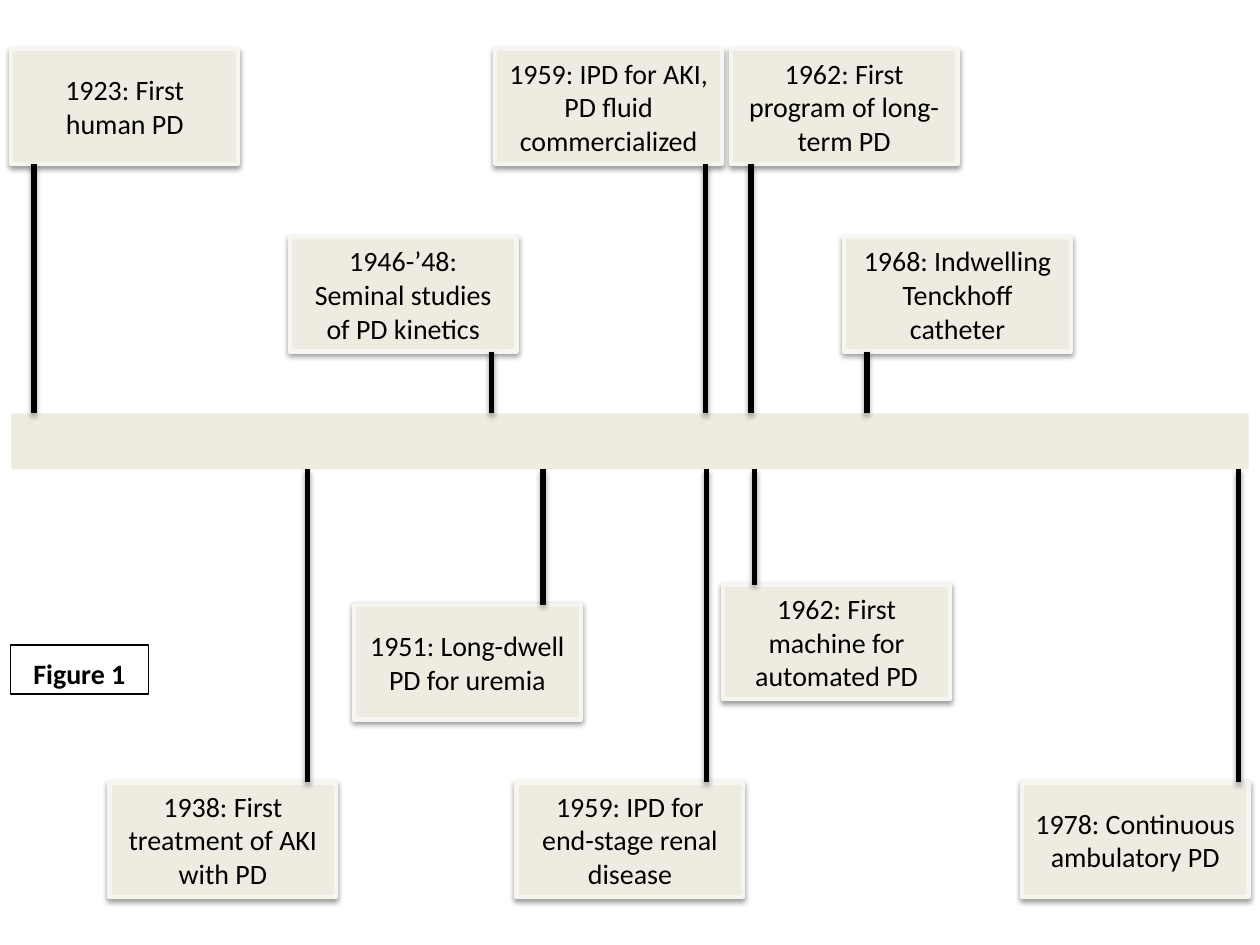
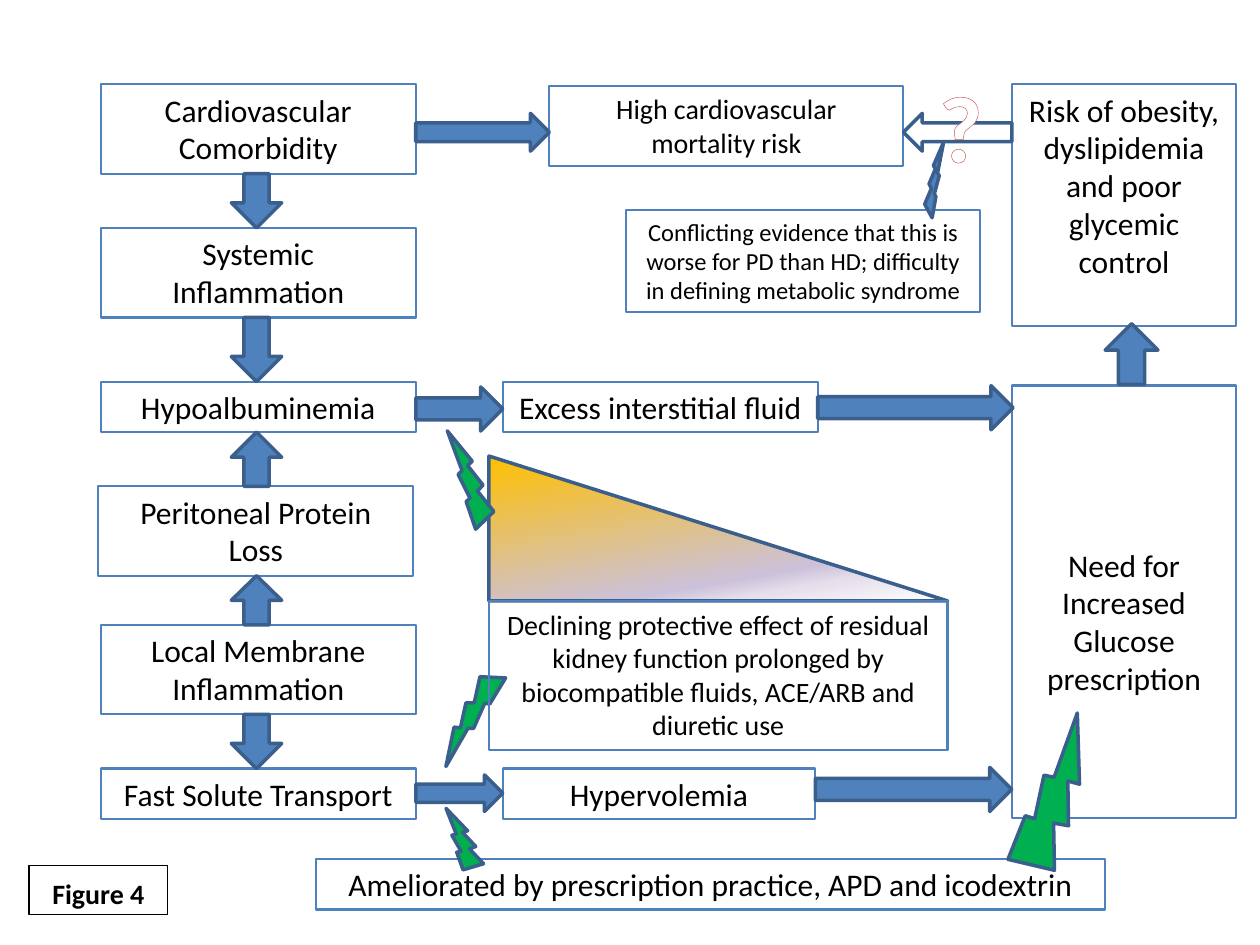
from dataclasses import dataclass
from typing import NamedTuple

from lxml import etree
from pptx import Presentation
from pptx.dml.color import RGBColor
from pptx.enum.shapes import MSO_CONNECTOR, MSO_SHAPE
from pptx.enum.text import MSO_ANCHOR, MSO_AUTO_SIZE, PP_ALIGN
from pptx.oxml.ns import qn
from pptx.util import Pt

RECTANGLE = MSO_SHAPE.RECTANGLE
TRIANGLE = MSO_SHAPE.RIGHT_TRIANGLE
BOLT = MSO_SHAPE.LIGHTNING_BOLT
UP = MSO_SHAPE.UP_ARROW
DOWN = MSO_SHAPE.DOWN_ARROW
LEFT = MSO_SHAPE.LEFT_ARROW
RIGHT = MSO_SHAPE.RIGHT_ARROW
STRAIGHT = MSO_CONNECTOR.STRAIGHT
TOP = MSO_ANCHOR.TOP
MIDDLE = MSO_ANCHOR.MIDDLE
CENTER = PP_ALIGN.CENTER
TITLE_ONLY = 5


@dataclass(frozen=True)
class Theme:
    font: str = "Calibri"
    black: str = "000000"
    white: str = "FFFFFF"
    beige: str = "EEECE1"
    beige_edge: str = "F6F5F0"
    blue: str = "4F81BD"
    navy: str = "3A5F8C"
    green: str = "00B050"
    red: str = "C0504D"
    fade: tuple = ((0, "FFC000"), (74, "CCC1DA"), (83, "E6E0EC"), (100, "FFFFFF"))
    small: int = 14
    medium: int = 16
    large: int = 18
    huge: int = 54


THEME = Theme()


class Box(NamedTuple):
    left: float
    top: float
    width: float
    height: float

    def inner(self, left, top, width, height):
        return Box(self.left + left, self.top + top, width, height)

    def lengths(self):
        return [Pt(value) for value in self]


def color(value):
    return RGBColor.from_string(value)


def set_text(shape, text, size, tone=THEME.black, bold=False, anchor=TOP):
    frame = shape.text_frame
    frame.text = text
    frame.word_wrap = True
    frame.vertical_anchor = anchor
    paragraph = frame.paragraphs[0]
    paragraph.alignment = CENTER
    font = paragraph.runs[0].font
    font.name = THEME.font
    font.size = Pt(size)
    font.bold = bold
    font.color.rgb = color(tone)
    return paragraph


def add_preset(slide, kind, box, fill=None, line=None, weight=2.0, rotation=0):
    shape = slide.shapes.add_shape(kind, *box.lengths())
    if fill:
        shape.fill.solid()
        shape.fill.fore_color.rgb = color(fill)
    else:
        shape.fill.background()
    if line:
        shape.line.color.rgb = color(line)
        shape.line.width = Pt(weight)
    else:
        shape.line.fill.background()
    shape.rotation = rotation
    shape.shadow.inherit = False
    return shape


def add_soft_shadow(shape):
    properties = shape._element.spPr
    effects = properties.find(qn("a:effectLst"))
    if effects is None:
        effects = etree.SubElement(properties, qn("a:effectLst"))
    shadow = etree.SubElement(effects, qn("a:outerShdw"), blurRad=str(Pt(3.1)),
                              dist=str(Pt(1.6)), dir="5400000", rotWithShape="0")
    tone = etree.SubElement(shadow, qn("a:srgbClr"), val=THEME.black)
    etree.SubElement(tone, qn("a:alpha"), val="38000")


def add_flow_box(slide, box, text, size=THEME.large):
    shape = add_preset(slide, RECTANGLE, box, line=THEME.blue, weight=1.25)
    set_text(shape, text, size)
    return shape


def add_arrow(slide, kind, box, fill=THEME.blue):
    return add_preset(slide, kind, box, fill, THEME.navy)


def add_bolt(slide, box, rotation=0, fill=THEME.green):
    return add_preset(slide, BOLT, box, fill, THEME.navy, rotation=rotation)


def add_figure_slide(presentation, label, box):
    slide = presentation.slides.add_slide(presentation.slide_layouts[TITLE_ONLY])
    title = slide.shapes.title
    title.left, title.top, title.width, title.height = box.lengths()
    title.fill.solid()
    title.fill.fore_color.rgb = color(THEME.white)
    title.line.color.rgb = color(THEME.black)
    title.line.width = Pt(0.75)
    title.text_frame.auto_size = MSO_AUTO_SIZE.NONE
    paragraph = set_text(title, label, THEME.medium, bold=True)
    paragraph.line_spacing = 1.15
    paragraph.space_after = Pt(10)
    return slide


def draw_timeline(slide, box, events):
    band = box.inner(0, 208.1, box.width, 32)
    add_preset(slide, RECTANGLE, band, THEME.beige)
    for text, left, top, stem in events:
        event_box = box.inner(left, top, 129.6, 65.5)
        event = add_preset(slide, RECTANGLE, event_box, THEME.beige, THEME.beige_edge, 2.5)
        add_soft_shadow(event)
        set_text(event, text, THEME.medium, anchor=MIDDLE)
        if event_box.top < band.top:
            start, end = event_box.top + event_box.height, band.top
        else:
            start, end = band.top + band.height, event_box.top
        x = Pt(box.left + stem)
        connector = slide.shapes.add_connector(STRAIGHT, x, Pt(start), x, Pt(end))
        connector.line.color.rgb = color(THEME.black)
        connector.line.width = Pt(3)
        add_soft_shadow(connector)


def draw_cause_column(slide, box, causes, arrows):
    bottoms = []
    for text, left, top, height in causes:
        add_flow_box(slide, box.inner(left, top, box.width, height), text)
        bottoms.append(top + height)
    for kind, bottom, cause in zip(arrows, bottoms, causes[1:]):
        add_arrow(slide, kind, box.inner(74.6, bottom, 28.8, cause[2] - bottom))


def draw_pathway(slide, box, text, left, width, entry, leaving,
                 size=THEME.large, kind=RIGHT, fill=THEME.blue):
    add_flow_box(slide, box.inner(left, 0, width, box.height), text, size)
    end = left + width
    add_arrow(slide, RIGHT, box.inner(0, entry[0], left, entry[1]))
    add_arrow(slide, kind, box.inner(end, leaving[0], box.width - end, leaving[1]), fill)


def draw_glucose_column(slide, box):
    add_flow_box(slide, box.inner(0, 0, box.width, 138.2),
                 "Risk of obesity, dyslipidemia and poor glycemic control")
    need = add_flow_box(slide, box.inner(0, 172.1, box.width, 247),
                        "Need for Increased Glucose prescription")
    need.text_frame.margin_top = Pt(91.5)
    add_arrow(slide, UP, box.inner(53.3, 136.8, 30.2, 34.6))


def draw_kidney_effect(slide, box):
    add_bolt(slide, box.inner(-23.8, 118.8, 25.9, 59), 48.9)
    wedge = add_preset(slide, TRIANGLE, box.inner(0, 0, box.width, 82.8), line=THEME.navy)
    wedge.fill.gradient()
    wedge.fill.gradient_angle = 280
    stops = wedge._element.spPr.find(".//" + qn("a:gsLst"))
    for stop in list(stops):
        stops.remove(stop)
    for position, tone in THEME.fade:
        stop = etree.SubElement(stops, qn("a:gs"), pos=str(position * 1000))
        etree.SubElement(stop, qn("a:srgbClr"), val=tone)
    add_flow_box(slide, box.inner(0, 82.8, box.width, box.height - 82.8),
                 "Declining protective effect of residual kidney function prolonged by "
                 "biocompatible fluids, ACE/ARB and diuretic use", THEME.medium)
    add_bolt(slide, box.inner(-23.8, -14.4, 26.6, 56.2), 180)


def draw_treatment(slide, box):
    add_flow_box(slide, box, "Ameliorated by prescription practice, APD and icodextrin")
    add_bolt(slide, box.inner(70.6, -26.6, 27.4, 32.4), 191.8)
    add_bolt(slide, box.inner(393.9, -76.3, 57.6, 85.7), 227.6)


def draw_debate(slide, box):
    add_flow_box(slide, box, "Conflicting evidence that this is worse for PD than HD; "
                 "difficulty in defining metabolic syndrome", THEME.small)
    question = slide.shapes.add_textbox(*box.inner(171.4, -84.9, 39.6, 72.7).lengths())
    paragraph = set_text(question, "?", THEME.huge, THEME.white, bold=True)
    question.text_frame.word_wrap = False
    outline = etree.Element(qn("a:ln"), w=str(Pt(0.52)))
    fill = etree.SubElement(outline, qn("a:solidFill"))
    etree.SubElement(fill, qn("a:srgbClr"), val=THEME.red)
    paragraph.runs[0].font._element.insert(0, outline)
    bolt = add_bolt(slide, box.inner(170.6, -38.9, 10.8, 43.2), fill=THEME.blue)
    bolt._element.spPr.find(qn("a:xfrm")).set("flipV", "1")


def build_history(presentation):
    slide = add_figure_slide(presentation, "Figure 1", Box(5.8, 368.6, 79.2, 28.1))
    draw_timeline(slide, Box(6.5, 28.1, 707, 484.5), [
        ("1923: First human PD", 0, 0, 12.9),
        ("1938: First treatment of AKI with PD", 56.1, 419, 169.2),
        ("1946-’48: Seminal studies of PD kinetics", 159.1, 107.3, 274.3),
        ("1951: Long-dwell PD for uremia", 195.8, 317.5, 303.8),
        ("1959: IPD for AKI, PD fluid commercialized", 276.5, 0, 396.7),
        ("1959: IPD for end-stage renal disease", 288.7, 419, 397.4),
        ("1962: First program of long-term PD", 411.1, 0, 422.6),
        ("1962: First machine for automated PD", 406.8, 306, 424.8),
        ("1968: Indwelling Tenckhoff catheter", 475.9, 107.3, 488.9),
        ("1978: Continuous ambulatory PD", 577.4, 419, 701.3),
    ])


def build_risk_map(presentation):
    slide = add_figure_slide(presentation, "Figure 4", Box(16.6, 494.6, 79.2, 28.1))
    draw_cause_column(slide, Box(57.6, 48.2, 180, 420), [
        ("Cardiovascular Comorbidity", 0, 0, 51.1),
        ("Systemic Inflammation", 0, 82.1, 51.1),
        ("Hypoalbuminemia", 0, 169.9, 28.8),
        ("Peritoneal Protein Loss", -1.4, 229.7, 51.1),
        ("Local Membrane Inflammation", 0, 308.9, 51.1),
        ("Fast Solute Transport", 0, 391, 28.8),
    ], [DOWN, DOWN, UP, UP, DOWN])
    draw_glucose_column(slide, Box(578.2, 48.2, 128.2, 419))
    draw_pathway(slide, Box(237.6, 49, 340.6, 46.1), "High cardiovascular mortality risk",
                 76.3, 202.3, (15.8, 21.6), (15.8, 21.6), THEME.medium, LEFT, None)
    draw_pathway(slide, Box(237.6, 218.2, 341.3, 28.8), "Excess interstitial fluid",
                 49.7, 180, (2.9, 25.2), (2.2, 25.2))
    draw_pathway(slide, Box(237.6, 439.2, 340.6, 28.8), "Hypervolemia",
                 49.7, 178.6, (3.6, 20.9), (-0.7, 25.2))
    draw_kidney_effect(slide, Box(279.4, 260.6, 262.1, 167.8))
    draw_treatment(slide, Box(180.7, 491, 450.7, 28.8))
    draw_debate(slide, Box(357.8, 120.2, 202.3, 58.3))


def main():
    presentation = Presentation()
    presentation.slide_width = Pt(720)
    presentation.slide_height = Pt(540)
    build_history(presentation)
    build_risk_map(presentation)
    presentation.save("out.pptx")


if __name__ == "__main__":
    main()
